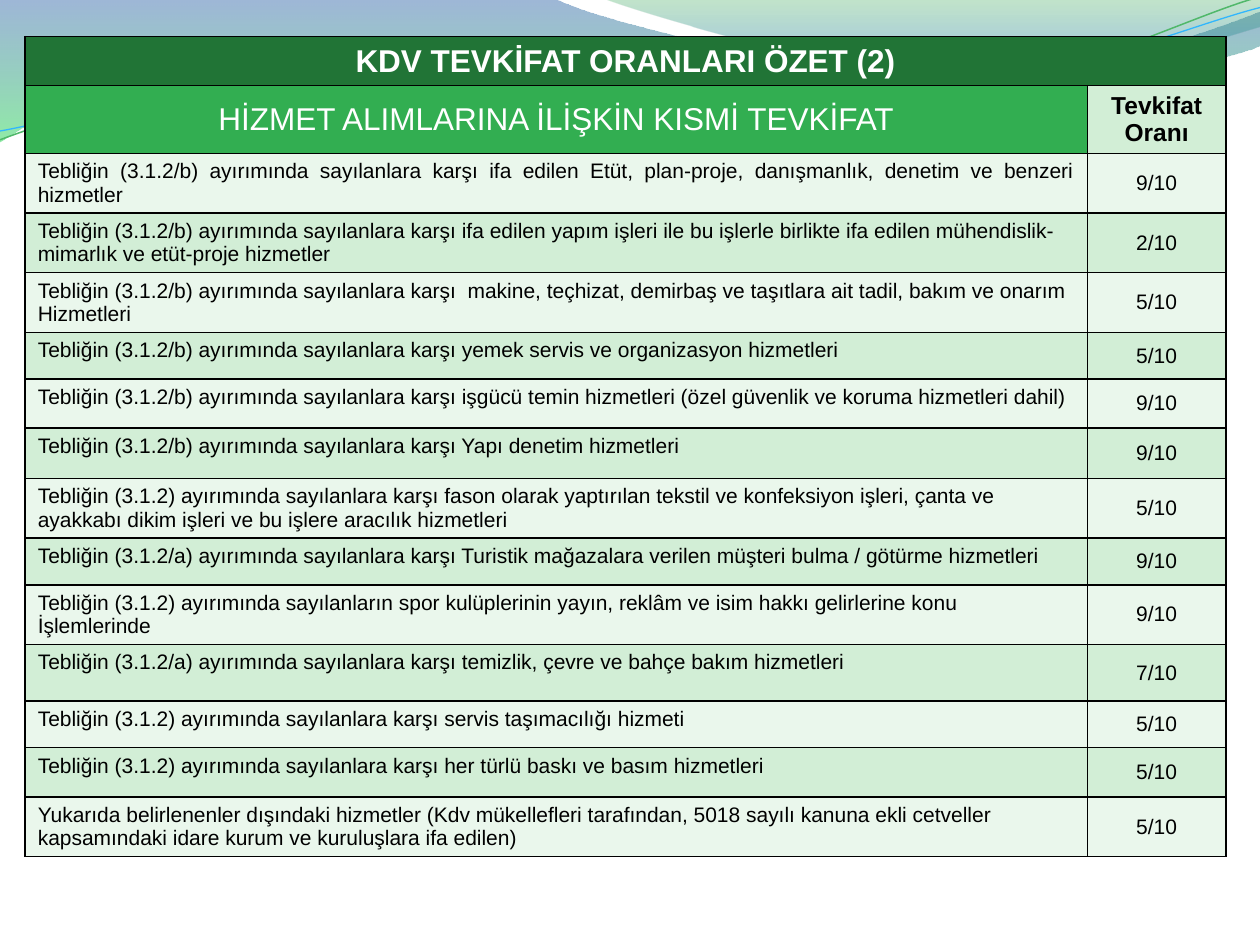
from lxml import etree
from pptx import Presentation, util as u
from pptx.dml.color import RGBColor
from pptx.enum import text
from pptx.oxml import ns

BLACK = RGBColor(0x00, 0x00, 0x00)
WHITE = RGBColor(0xFF, 0xFF, 0xFF)
DARK_GREEN = RGBColor(0x21, 0x74, 0x36)
GREEN = RGBColor(0x32, 0xAE, 0x51)
LIGHT_GREEN = RGBColor(0xD2, 0xEE, 0xD6)
PALE_GREEN = RGBColor(0xEA, 0xF7, 0xEC)
WAVE_BLUE = RGBColor(0x29, 0x60, 0xA7)
WAVE_MINT = RGBColor(0x35, 0xDA, 0x5E)
WAVE_GREEN = RGBColor(0x36, 0xA7, 0x52)
WAVE_SKY = RGBColor(0x24, 0x72, 0xD3)
LINE_GREEN = RGBColor(0x50, 0xB8, 0x6A)
LINE_BLUE = RGBColor(0x31, 0xB6, 0xFD)

CENTER, JUSTIFY, LEFT = text.PP_ALIGN.CENTER, text.PP_ALIGN.JUSTIFY, text.PP_ALIGN.LEFT
TOP, MIDDLE = text.MSO_ANCHOR.TOP, text.MSO_ANCHOR.MIDDLE

TITLE = "KDV TEVKİFAT ORANLARI ÖZET (2)"
HEADINGS = ("HİZMET ALIMLARINA İLİŞKİN KISMİ TEVKİFAT", "Tevkifat Oranı")
SERVICES = [
    ("Tebliğin (3.1.2/b) ayırımında sayılanlara karşı ifa edilen Etüt, plan-proje, "
     "danışmanlık, denetim ve benzeri hizmetler", "9/10", 0.45),
    ("Tebliğin (3.1.2/b) ayırımında sayılanlara karşı ifa edilen yapım işleri ile bu işlerle "
     "birlikte ifa edilen mühendislik-mimarlık ve etüt-proje hizmetler", "2/10", 0.45),
    ("Tebliğin (3.1.2/b) ayırımında sayılanlara karşı  makine, teçhizat, demirbaş ve "
     "taşıtlara ait tadil, bakım ve onarım Hizmetleri", "5/10", 0.47),
    ("Tebliğin (3.1.2/b) ayırımında sayılanlara karşı yemek servis ve organizasyon "
     "hizmetleri", "5/10", 0.37),
    ("Tebliğin (3.1.2/b) ayırımında sayılanlara karşı işgücü temin hizmetleri (özel "
     "güvenlik ve koruma hizmetleri dahil)", "9/10", 0.39),
    ("Tebliğin (3.1.2/b) ayırımında sayılanlara karşı Yapı denetim hizmetleri", "9/10", 0.4),
    ("Tebliğin (3.1.2) ayırımında sayılanlara karşı fason olarak yaptırılan tekstil ve "
     "konfeksiyon işleri, çanta ve ayakkabı dikim işleri ve bu işlere aracılık hizmetleri",
     "5/10", 0.45),
    ("Tebliğin (3.1.2/a) ayırımında sayılanlara karşı Turistik mağazalara verilen müşteri "
     "bulma / götürme hizmetleri", "9/10", 0.37),
    ("Tebliğin (3.1.2) ayırımında sayılanların spor kulüplerinin yayın, reklâm ve isim "
     "hakkı gelirlerine konu İşlemlerinde", "9/10", 0.45),
    ("Tebliğin (3.1.2/a) ayırımında sayılanlara karşı temizlik, çevre ve bahçe bakım "
     "hizmetleri", "7/10", 0.45),
    ("Tebliğin (3.1.2) ayırımında sayılanlara karşı servis taşımacılığı hizmeti", "5/10", 0.37),
    ("Tebliğin (3.1.2) ayırımında sayılanlara karşı her türlü baskı ve basım hizmetleri",
     "5/10", 0.39),
    ("Yukarıda belirlenenler dışındaki hizmetler (Kdv mükellefleri tarafından, 5018 sayılı "
     "kanuna ekli cetveller kapsamındaki idare kurum ve kuruluşlara ifa edilen)", "5/10", 0.45),
]


class SlideBuilder:
    """Holds the style and the current slide."""

    font = "Arial"

    def __init__(self, prs):
        self.s = prs.slides.add_slide(prs.slide_layouts[6])

    def outline(self, start, segments, close):
        (x, y), *rest = [(u.Inches(x), u.Inches(y))
                         for x, y in [start, *(p for segment in segments for p in segment)]]
        builder = self.s.shapes.build_freeform(x, y)
        builder.add_line_segments(rest, close=close)
        sp = builder.convert_to_shape()
        sp.shadow.inherit = False
        steps = iter(sp._element.xpath(".//a:lnTo"))
        for segment in segments:
            first, *others = [next(steps) for _ in segment]
            if others:
                bezier = etree.Element(ns.qn("a:cubicBezTo"))
                first.addprevious(bezier)
                for step in (first, *others):
                    bezier.append(step[0])
                    step.getparent().remove(step)
        return sp

    def wave(self, start, segments, stops):
        sp = self.outline(start, segments, True)
        sp.line.fill.background()
        sp.fill.gradient()
        sp.fill.gradient_angle = 270
        for stop, (position, color, _) in zip(sp.fill.gradient_stops, stops):
            stop.position = position
            stop.color.rgb = color
        colors = sp._element.spPr.xpath("./a:gradFill//a:srgbClr")
        for color, (_, _, opacity) in zip(colors, stops):
            etree.SubElement(color, ns.qn("a:alpha"), val=str(opacity * 1000))

    def curve(self, start, segments, color, width):
        sp = self.outline(start, segments, False)
        sp.fill.background()
        sp.line.color.rgb = color
        sp.line.width = u.Pt(width)

    def table(self, left, top, widths, heights):
        frame = self.s.shapes.add_table(len(heights), len(widths), u.Inches(left), u.Inches(top),
                                        u.Inches(sum(widths)), u.Inches(sum(heights)))
        table = frame.table
        table.first_row = table.horz_banding = False
        for column, width in zip(table.columns, widths):
            column.width = u.Inches(width)
        for row, height in zip(table.rows, heights):
            row.height = u.Inches(height)
        for cell in table.iter_cells():
            self.borders(cell)
        return table

    def borders(self, cell):
        tc_pr = cell._tc.get_or_add_tcPr()
        for side in ("lnL", "lnR", "lnT", "lnB"):
            line = etree.SubElement(tc_pr, ns.qn(f"a:{side}"), w=str(u.Pt(1)))
            fill = etree.SubElement(line, ns.qn("a:solidFill"))
            etree.SubElement(fill, ns.qn("a:srgbClr"), val=str(BLACK))

    def cell(self, cell, words, fill, size=12, color=BLACK, bold=False, align=CENTER,
             anchor=MIDDLE):
        cell.fill.solid()
        cell.fill.fore_color.rgb = fill
        cell.vertical_anchor = anchor
        p = cell.text_frame.paragraphs[0]
        p.text = words
        p.alignment = align
        p.font.name, p.font.size, p.font.bold = self.font, u.Pt(size), bold
        p.font.color.rgb = color


def main():
    prs = Presentation()
    prs.slide_width, prs.slide_height = u.Inches(10), u.Inches(7.5)
    b = SlideBuilder(prs)

    b.wave((0, 0), [
        [(4.4, -0.01)],
        [(4.76, 0.17), (6.64, 0.63), (7.58, 0.63)],
        [(8.53, 0.63), (9.58, 0.26), (10, 0.09)],
        [(10.01, 0.36)],
        [(9.83, 0.44), (8.7, 0.76), (7.46, 0.75)],
        [(6.22, 0.75), (3.82, 0.28), (2.57, 0.34)],
        [(1.29, 0.36), (0.46, 0.83), (-0.01, 1.13)],
    ], [(0, WAVE_BLUE, 45), (1, WAVE_MINT, 55)])
    b.wave((4.79, -0.01), [
        [(5.09, 0.11), (6.82, 0.62), (7.69, 0.65)],
        [(8.56, 0.69), (9.61, 0.32), (10, 0.21)],
        [(10, 0)],
    ], [(0, WAVE_GREEN, 30), (0.8, WAVE_SKY, 45)])
    b.curve((0, 1.11), [
        [(0.48, 0.93), (1.58, 0.57), (2.77, 0.52)],
        [(3.95, 0.47), (5.93, 0.89), (7.13, 0.8)],
        [(8.33, 0.71), (9.38, 0.15), (9.98, -0.02)],
    ], LINE_GREEN, 0.85)
    b.curve((0, 1.04), [
        [(0.47, 0.96), (1.64, 0.61), (2.83, 0.56)],
        [(4.03, 0.51), (5.97, 0.84), (7.17, 0.75)],
        [(8.36, 0.67), (9.41, 0.21), (10, 0.06)],
    ], LINE_BLUE, 0.75)

    heights = [0.39, 0.47] + [height for _, _, height in SERVICES]
    table = b.table(0.2, 0.29, (8.43, 1.1), heights)
    table.cell(0, 0).merge(table.cell(0, 1))
    b.cell(table.cell(0, 0), TITLE, DARK_GREEN, 18, WHITE, True)
    b.cell(table.cell(1, 0), HEADINGS[0], GREEN, 18, WHITE)
    b.cell(table.cell(1, 1), HEADINGS[1], LIGHT_GREEN, 14, bold=True, anchor=TOP)
    for i, (service, rate, _) in enumerate(SERVICES):
        fill = LIGHT_GREEN if i % 2 else PALE_GREEN
        align = LEFT if i else JUSTIFY
        b.cell(table.cell(i + 2, 0), service, fill, align=align, anchor=TOP)
        b.cell(table.cell(i + 2, 1), rate, fill)

    prs.save("out.pptx")


if __name__ == "__main__":
    main()
